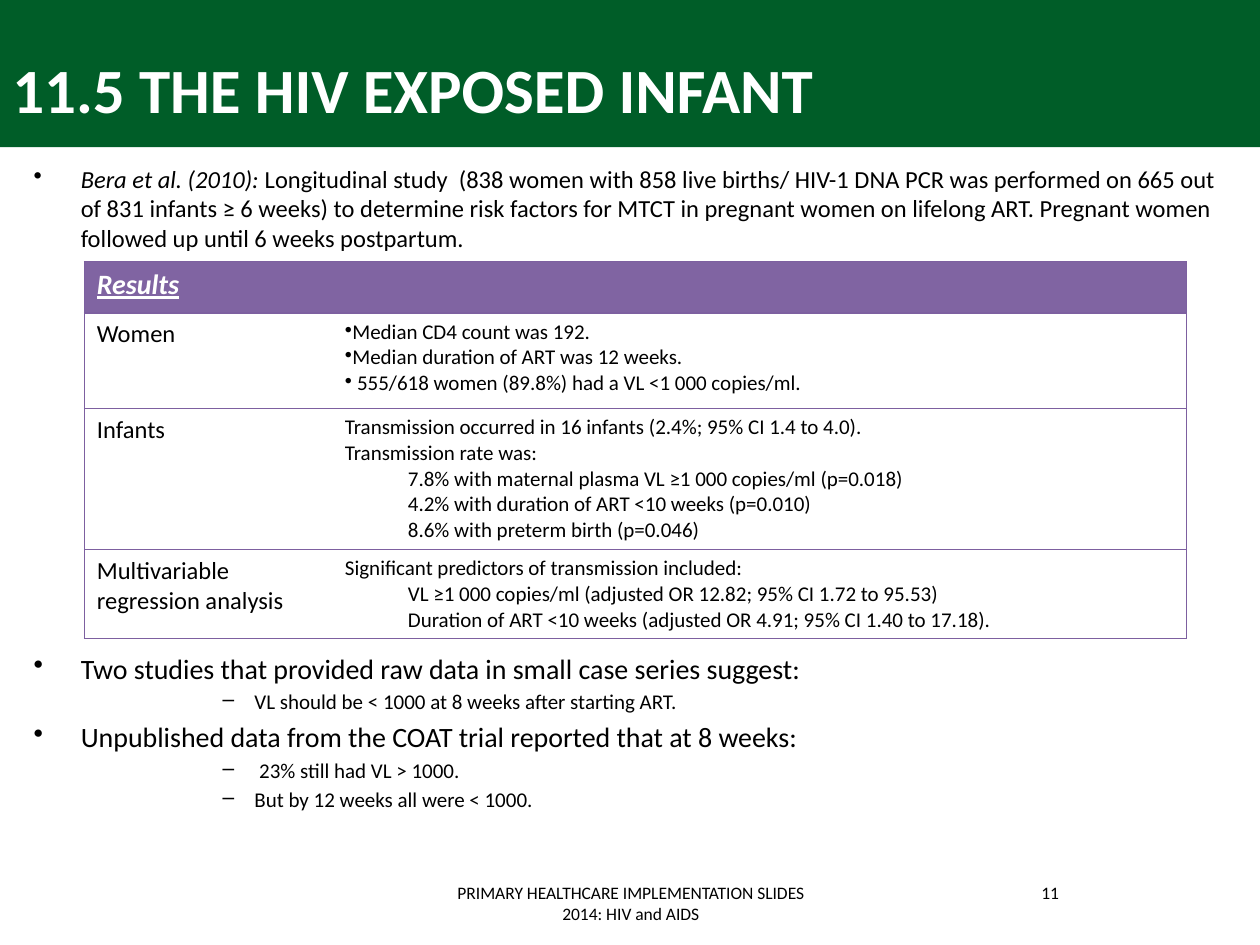
"""Build the slide on the HIV exposed infant with its table of study results."""
from lxml.etree import SubElement
from pptx import Presentation
from pptx.dml.color import RGBColor
from pptx.enum.shapes import MSO_SHAPE as Shape
from pptx.enum.text import MSO_ANCHOR as Anchor, PP_ALIGN as Align
from pptx.oxml import parse_xml
from pptx.oxml.ns import nsdecls, qn
from pptx.util import Cm, Pt

GREEN, PURPLE, EDGE, BLACK, WHITE = "005D28", "8064A2", "7D60A0", "000000", "FFFFFF"
STYLES = {
    "title": {"font": {"size": Pt(36), "bold": True}, "color": WHITE},
    "footer": {"font": {"size": Pt(10)}, "align": Align.CENTER},
    "study": {"font": {"size": Pt(14)}, "bullet": "•", "left": 0.95, "hang": 0.95},
    "point": {"font": {"size": Pt(16)}, "bullet": "•", "left": 0.95, "hang": 0.95, "before": 3.2},
    "detail": {"font": {"size": Pt(12)}, "bullet": "–", "left": 4.45, "hang": 0.64, "before": 2.4},
    "header": {"font": {"size": Pt(16), "bold": True, "italic": True, "underline": True}, "color": WHITE},
    "group": {"font": {"size": Pt(14)}},
    "finding": {"font": {"size": Pt(12)}},
    "dotted": {"font": {"size": Pt(12)}, "bullet": "•"},
    "inset": {"font": {"size": Pt(12)}, "left": 1.27},
}


def color(value):
    """Turn a hex string into a colour."""
    return RGBColor.from_string(value)


def write(frame, lines):
    """Fill a text frame with (style name, text, optional italic lead) lines."""
    frame.word_wrap = True
    for index, (name, text, *lead) in enumerate(lines):
        style = STYLES[name]
        para = frame.paragraphs[0] if index == 0 else frame.add_paragraph()
        para.alignment = style.get("align", Align.LEFT)
        if index and "before" in style:
            para.space_before = Pt(style["before"])
        props = para._p.get_or_add_pPr()
        props.set("marL", str(Cm(style.get("left", 0))))
        props.set("indent", str(-Cm(style.get("hang", 0))))
        if "bullet" in style:
            SubElement(props, qn("a:buChar"), char=style["bullet"])
        for words in lead + [text]:
            span = para.add_run()
            span.text = words
            span.font.name = "Calibri"
            span.font.color.rgb = color(style.get("color", BLACK))
            for key, value in style["font"].items():
                setattr(span.font, key, value)
            if words in lead:
                span.font.italic = True


deck = Presentation()
deck.slide_width, deck.slide_height = Cm(25.4), Cm(19.05)
page = deck.slides.add_slide(deck.slide_layouts[6])

banner = page.shapes.add_shape(Shape.RECTANGLE, 0, 0, deck.slide_width, Cm(2.97))
banner.shadow.inherit = False
banner.fill.solid()
banner.fill.fore_color.rgb = color(GREEN)
banner.line.fill.background()

boxes = [
    ((0, 0.89, 22.86, 2.08), [("title", "11.5 THE HIV EXPOSED INFANT")]),
    ((0.43, 3.18, 24.77, 2.05), [(
        "study",
        "Longitudinal study  (838 women with 858 live births/ HIV-1 DNA PCR was performed on 665 out "
        "of 831 infants ≥ 6 weeks) to determine risk factors for MTCT in pregnant women on lifelong ART. "
        "Pregnant women followed up until 6 weeks postpartum.",
        "Bera et al. (2010): ",
    )]),
    ((0.43, 13, 24.77, 3.6), [
        ("point", "Two studies that provided raw data in small case series suggest:"),
        ("detail", "VL should be < 1000 at 8 weeks after starting ART."),
        ("point", "Unpublished data from the COAT trial reported that at 8 weeks:"),
        ("detail", " 23% still had VL > 1000."),
        ("detail", "But by 12 weeks all were < 1000."),
    ]),
    ((8.69, 17.65, 8.05, 1.02), [("footer", "PRIMARY HEALTHCARE IMPLEMENTATION SLIDES 2014: HIV and AIDS")]),
    ((18.21, 17.65, 5.92, 1.02), [("footer", "11")]),
]
for place, lines in boxes:
    box = page.shapes.add_textbox(*map(Cm, place))
    box.text_frame.vertical_anchor = Anchor.TOP
    write(box.text_frame, lines)

rows = [
    (1.03, [("header", "Results")], []),
    (1.93, [("group", "Women")], [
        ("dotted", "Median CD4 count was 192."),
        ("dotted", "Median duration of ART was 12 weeks."),
        ("dotted", " 555/618 women (89.8%) had a VL <1 000 copies/ml."),
    ]),
    (2.84, [("group", "Infants")], [
        ("finding", "Transmission occurred in 16 infants (2.4%; 95% CI 1.4 to 4.0)."),
        ("finding", "Transmission rate was:"),
        ("inset", "7.8% with maternal plasma VL ≥1 000 copies/ml (p=0.018)"),
        ("inset", "4.2% with duration of ART <10 weeks (p=0.010)"),
        ("inset", "8.6% with preterm birth (p=0.046)"),
    ]),
    (1.8, [("group", "Multivariable regression analysis")], [
        ("finding", "Significant predictors of transmission included:"),
        ("inset", "VL ≥1 000 copies/ml (adjusted OR 12.82; 95% CI 1.72 to 95.53)"),
        ("inset", "Duration of ART <10 weeks (adjusted OR 4.91; 95% CI 1.40 to 17.18)."),
    ]),
]
widths = [5, 17.22]
height = sum(row[0] for row in rows)
results = page.shapes.add_table(
    len(rows), len(widths), Cm(1.7), Cm(5.28), Cm(sum(widths)), Cm(height)
).table
results.horz_banding = False
for column, width in zip(results.columns, widths):
    column.width = Cm(width)
for number, (tall, *contents) in enumerate(rows):
    results.rows[number].height = Cm(tall)
    for side, lines in enumerate(contents):
        cell = results.cell(number, side)
        cell.fill.solid()
        cell.fill.fore_color.rgb = color(WHITE if number else PURPLE)
        write(cell.text_frame, lines)
        drawn = {"lnL": side == 0, "lnR": side == 1, "lnT": True, "lnB": True}
        for order, (edge, visible) in enumerate(drawn.items()):
            paint = f'<a:solidFill><a:srgbClr val="{EDGE}"/></a:solidFill>' if visible else "<a:noFill/>"
            line = parse_xml(f'<a:{edge} {nsdecls("a")} w="{Pt(0.75)}">{paint}</a:{edge}>')
            cell._tc.get_or_add_tcPr().insert(order, line)

deck.save("out.pptx")
